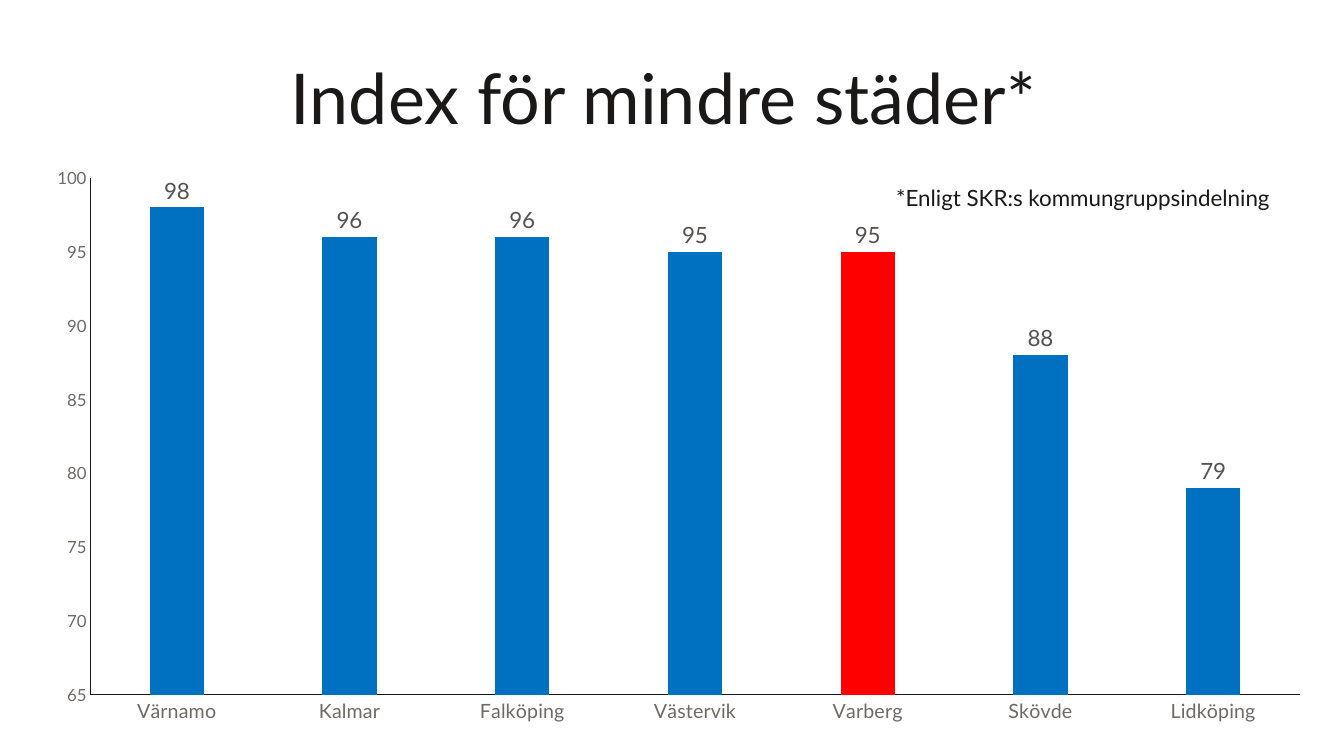
from dataclasses import dataclass

from lxml import etree
from pptx import Presentation
from pptx import util as u
from pptx.chart.data import CategoryChartData
from pptx.dml.color import RGBColor
from pptx.enum import chart as charts, text

WIDTH, HEIGHT = u.Inches(13.33), u.Inches(7.5)
FONT = "Lato"
INK, AXIS_GREY, LABEL_GREY = "1A1918", "6E6A65", "56524F"
BLUE, RED = "0070C0", "FF0000"
HIGHLIGHT = "Varberg"
CITY_INDEX = {
    "Värnamo": 98, "Kalmar": 96, "Falköping": 96, "Västervik": 95,
    "Varberg": 95, "Skövde": 88, "Lidköping": 79,
}


@dataclass
class Area:
    """A rectangle in percent of the slide's width and height."""
    left: float
    top: float
    width: float
    height: float

    def lengths(self) -> tuple[int, int, int, int]:
        return (int(WIDTH * self.left / 100), int(HEIGHT * self.top / 100),
                int(WIDTH * self.width / 100), int(HEIGHT * self.height / 100))


@dataclass
class Caption:
    words: str
    area: Area
    size: int
    align: text.PP_ALIGN = text.PP_ALIGN.LEFT
    anchor: text.MSO_ANCHOR = text.MSO_ANCHOR.TOP
    spacing: float = 1.0
    inset_x: float = 0.1
    inset_y: float = 0.05


CHART_AREA = Area(2.4, 20.67, 96.32, 76.67)
CAPTIONS = [
    Caption("Index för mindre städer* ", Area(8.7, 2.8, 82.67, 15.47), 50,
            text.PP_ALIGN.CENTER, text.MSO_ANCHOR.BOTTOM, 0.8, 0, 0),
    Caption("*Enligt SKR:s kommungruppsindelning",
            Area(65.94, 23.73, 32.48, 4.93), 16),
]


def colour(code: str) -> RGBColor:
    return RGBColor.from_string(code)


def style_font(font, size: int, code: str) -> None:
    font.name = FONT
    font.size = u.Pt(size)
    font.color.rgb = colour(code)


def add_caption(page, caption: Caption) -> None:
    box = page.shapes.add_textbox(*caption.area.lengths())
    frame = box.text_frame
    frame.word_wrap = True
    frame.vertical_anchor = caption.anchor
    frame.margin_left = frame.margin_right = u.Inches(caption.inset_x)
    frame.margin_top = frame.margin_bottom = u.Inches(caption.inset_y)
    para = frame.paragraphs[0]
    para.alignment = caption.align
    para.line_spacing = caption.spacing
    span = para.add_run()
    span.text = caption.words
    style_font(span.font, caption.size, INK)


def style_axis(axis, size: int) -> None:
    axis.has_major_gridlines = False
    axis.major_tick_mark = axis.minor_tick_mark = charts.XL_TICK_MARK.NONE
    axis.format.line.color.rgb = colour(INK)
    axis.format.line.width = u.Pt(0.75)
    style_font(axis.tick_labels.font, size, AXIS_GREY)


def place_plot(chart, **shares: float) -> None:
    """Fix the inner plot area as shares of the chart's size."""
    plot_area = chart.plots[0]._element.getparent()
    space = etree.QName(plot_area).namespace
    for old in plot_area.findall(f"{{{space}}}layout"):
        plot_area.remove(old)
    layout = etree.Element(f"{{{space}}}layout")
    manual = etree.SubElement(layout, f"{{{space}}}manualLayout")
    settings = {"layoutTarget": "inner", "xMode": "edge", "yMode": "edge", **shares}
    for name, value in settings.items():
        etree.SubElement(manual, f"{{{space}}}{name}", val=str(value))
    plot_area.insert(0, layout)


def add_city_chart(page) -> None:
    data = CategoryChartData()
    data.categories = list(CITY_INDEX)
    data.add_series("Series 1", list(CITY_INDEX.values()))
    chart = page.shapes.add_chart(charts.XL_CHART_TYPE.COLUMN_CLUSTERED,
                                  *CHART_AREA.lengths(), data).chart
    chart.has_legend = chart.has_title = False
    style_font(chart.font, 10, INK)
    place_plot(chart, x=0.045, y=0.037, w=0.934, h=0.892)

    # Axes
    style_axis(chart.category_axis, 14)
    style_axis(chart.value_axis, 12)
    chart.value_axis.minimum_scale = 65
    chart.value_axis.maximum_scale = 100
    chart.value_axis.major_unit = 5

    # Columns
    plot = chart.plots[0]
    plot.vary_by_categories = False
    plot.gap_width, plot.overlap = 219, -27
    series = plot.series[0]
    highlight = series.points[list(CITY_INDEX).index(HIGHLIGHT)]
    for part, code in ((series, BLUE), (highlight, RED)):
        part.format.fill.solid()
        part.format.fill.fore_color.rgb = colour(code)

    # Value labels
    labels = series.data_labels
    labels.show_value = True
    labels.position = charts.XL_LABEL_POSITION.OUTSIDE_END
    style_font(labels.font, 16, LABEL_GREY)


def main() -> None:
    deck = Presentation()
    deck.slide_width, deck.slide_height = WIDTH, HEIGHT
    page = deck.slides.add_slide(deck.slide_layouts[6])
    add_city_chart(page)
    for caption in CAPTIONS:
        add_caption(page, caption)
    deck.save("out.pptx")


if __name__ == "__main__":
    main()
